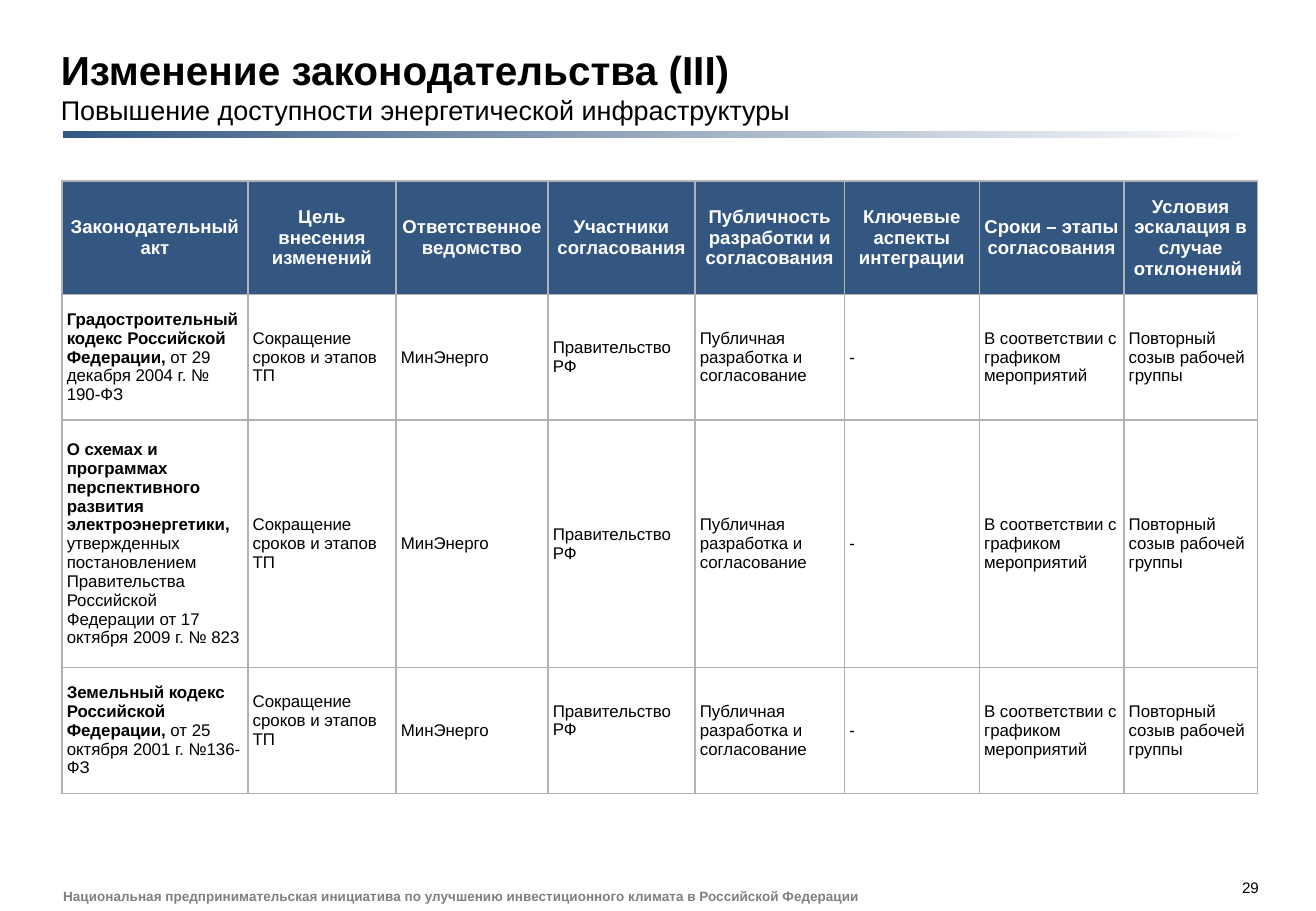
from dataclasses import dataclass

from lxml.etree import SubElement
from pptx import Presentation
from pptx.dml.color import RGBColor
from pptx.enum.shapes import MSO_SHAPE
from pptx.enum.text import MSO_AUTO_SIZE, MSO_VERTICAL_ANCHOR as Anchor, PP_ALIGN as Align
from pptx.oxml import parse_xml
from pptx.oxml.ns import nsdecls, qn
from pptx.slide import Slide
from pptx.table import _Cell as Cell
from pptx.text.text import TextFrame
from pptx.util import Inches, Pt

NAVY = RGBColor(0x34, 0x57, 0x82)
WHITE = RGBColor(0xFF, 0xFF, 0xFF)
BLACK = RGBColor(0x00, 0x00, 0x00)
GRAY = RGBColor(0x80, 0x80, 0x80)
BORDER = RGBColor(0xB2, 0xB2, 0xB2)
FONT = "Arial"


@dataclass(frozen=True)
class Law:
    name: str
    details: str
    raised_columns: tuple[int, ...] = ()


@dataclass(frozen=True)
class Caption:
    text: str
    left: float
    top: float
    width: float
    height: float
    size: float
    color: RGBColor
    bold: bool = False
    align: Align = Align.LEFT
    anchor: Anchor = Anchor.TOP


HEADERS = (
    "Законодательный акт",
    "Цель внесения изменений",
    "Ответственное ведомство",
    "Участники согласования",
    "Публичность разработки и согласования",
    "Ключевые аспекты интеграции",
    "Сроки – этапы согласования",
    "Условия эскалация в случае отклонений ",
)
LAWS = (
    Law("Градостроительный кодекс Российской Федерации,", " от 29 декабря 2004 г. № 190-ФЗ"),
    Law(
        "О схемах и программах перспективного развития электроэнергетики, ",
        "утвержденных постановлением Правительства Российской Федерации от 17 октября 2009 г. № 823",
    ),
    Law("Земельный кодекс Российской Федерации, ", "от 25 октября 2001 г. №136-ФЗ", (1, 3)),
)
COMMON_TERMS = (
    "Сокращение сроков и этапов ТП",
    "МинЭнерго",
    "Правительство РФ",
    "Публичная разработка и согласование",
    "-",
    "В соответствии с графиком мероприятий",
    "Повторный созыв рабочей группы",
)
COLUMN_WIDTHS = (1.53, 1.22, 1.25, 1.21, 1.23, 1.11, 1.19, 1.1)
ROW_HEIGHTS = (0.93, 1.03, 2.03, 1.03)
CAPTIONS = (
    Caption("29", 10.15, 7.23, 0.21, 0.14, 9, BLACK, align=Align.RIGHT),
    Caption(
        "Национальная предпринимательская инициатива по улучшению инвестиционного климата "
        "в Российской Федерации",
        0.52, 7.31, 6.61, 0.13, 8, GRAY, bold=True, anchor=Anchor.MIDDLE,
    ),
)


def write_text(
    frame: TextFrame,
    text: str,
    *,
    size: float,
    color: RGBColor = BLACK,
    bold: bool = False,
    align: Align = Align.LEFT,
) -> None:
    paragraph = frame.paragraphs[0]
    paragraph.alignment = align
    run = paragraph.add_run()
    run.text = text
    run.font.name = FONT
    run.font.size = Pt(size)
    run.font.bold = bold
    run.font.color.rgb = color


def set_margins(frame: TextFrame, vertical: float) -> None:
    frame.margin_left = frame.margin_right = 0
    frame.margin_top = frame.margin_bottom = Inches(vertical)


def add_title(slide: Slide) -> None:
    title = slide.shapes.title
    title.left, title.top = Inches(0.5), Inches(0.18)
    title.width, title.height = Inches(9.83), Inches(0.91)
    frame = title.text_frame
    frame.auto_size = MSO_AUTO_SIZE.NONE
    frame.vertical_anchor = Anchor.BOTTOM
    set_margins(frame, 0.05)
    write_text(frame, "Изменение законодательства (III)", size=24, bold=True)
    frame.paragraphs[0].add_line_break()
    write_text(frame, "Повышение доступности энергетической инфраструктуры", size=16)


def add_gradient_rule(slide: Slide) -> None:
    rule = slide.shapes.add_shape(
        MSO_SHAPE.RECTANGLE, Inches(0.52), Inches(1.08), Inches(9.8), Inches(0.06)
    )
    rule.shadow.inherit = False
    rule.line.fill.background()
    rule.fill.gradient()
    rule.fill.gradient_angle = 0
    for stop, position, color in zip(rule.fill.gradient_stops, (0, 1), (NAVY, WHITE)):
        stop.position = position
        stop.color.rgb = color


def add_caption(slide: Slide, caption: Caption) -> None:
    box = slide.shapes.add_textbox(
        Inches(caption.left), Inches(caption.top), Inches(caption.width), Inches(caption.height)
    )
    frame = box.text_frame
    frame.word_wrap = caption.align == Align.RIGHT
    frame.vertical_anchor = caption.anchor
    set_margins(frame, 0)
    write_text(frame, caption.text, size=caption.size, color=caption.color,
               bold=caption.bold, align=caption.align)


def format_cell(cell: Cell, fill: RGBColor, bottom_margin: float = 0.1) -> None:
    cell.vertical_anchor = Anchor.MIDDLE
    cell.margin_left = cell.margin_right = Inches(0.04)
    cell.margin_top = Inches(0.1)
    cell.margin_bottom = Inches(bottom_margin)
    cell.fill.solid()
    cell.fill.fore_color.rgb = fill
    properties = cell._tc.get_or_add_tcPr()
    for index, side in enumerate(("lnL", "lnR", "lnT", "lnB")):
        border = parse_xml(f'<a:{side} {nsdecls("a")} w="{Pt(1)}"/>')
        SubElement(SubElement(border, qn("a:solidFill")), qn("a:srgbClr"), val=str(BORDER))
        properties.insert(index, border)


def add_law_table(slide: Slide) -> None:
    table = slide.shapes.add_table(
        len(ROW_HEIGHTS), len(COLUMN_WIDTHS), Inches(0.51), Inches(1.49),
        Inches(sum(COLUMN_WIDTHS)), Inches(sum(ROW_HEIGHTS)),
    ).table
    for column, width in zip(table.columns, COLUMN_WIDTHS):
        column.width = Inches(width)
    for row, height in zip(table.rows, ROW_HEIGHTS):
        row.height = Inches(height)

    for column_index, header in enumerate(HEADERS):
        cell = table.cell(0, column_index)
        format_cell(cell, NAVY)
        write_text(cell.text_frame, header, size=11, color=WHITE, bold=True, align=Align.CENTER)

    for row_index, law in enumerate(LAWS, start=1):
        law_cell = table.cell(row_index, 0)
        format_cell(law_cell, WHITE)
        write_text(law_cell.text_frame, law.name, size=10, bold=True)
        write_text(law_cell.text_frame, law.details, size=10)
        for column_index, term in enumerate(COMMON_TERMS, start=1):
            cell = table.cell(row_index, column_index)
            format_cell(cell, WHITE, 0.26 if column_index in law.raised_columns else 0.1)
            write_text(cell.text_frame, term, size=10)


def main() -> None:
    presentation = Presentation()
    presentation.slide_width, presentation.slide_height = Inches(10.83), Inches(7.5)
    slide = presentation.slides.add_slide(presentation.slide_layouts[5])
    add_gradient_rule(slide)
    for caption in CAPTIONS:
        add_caption(slide, caption)
    add_law_table(slide)
    add_title(slide)
    presentation.save("out.pptx")


if __name__ == "__main__":
    main()
